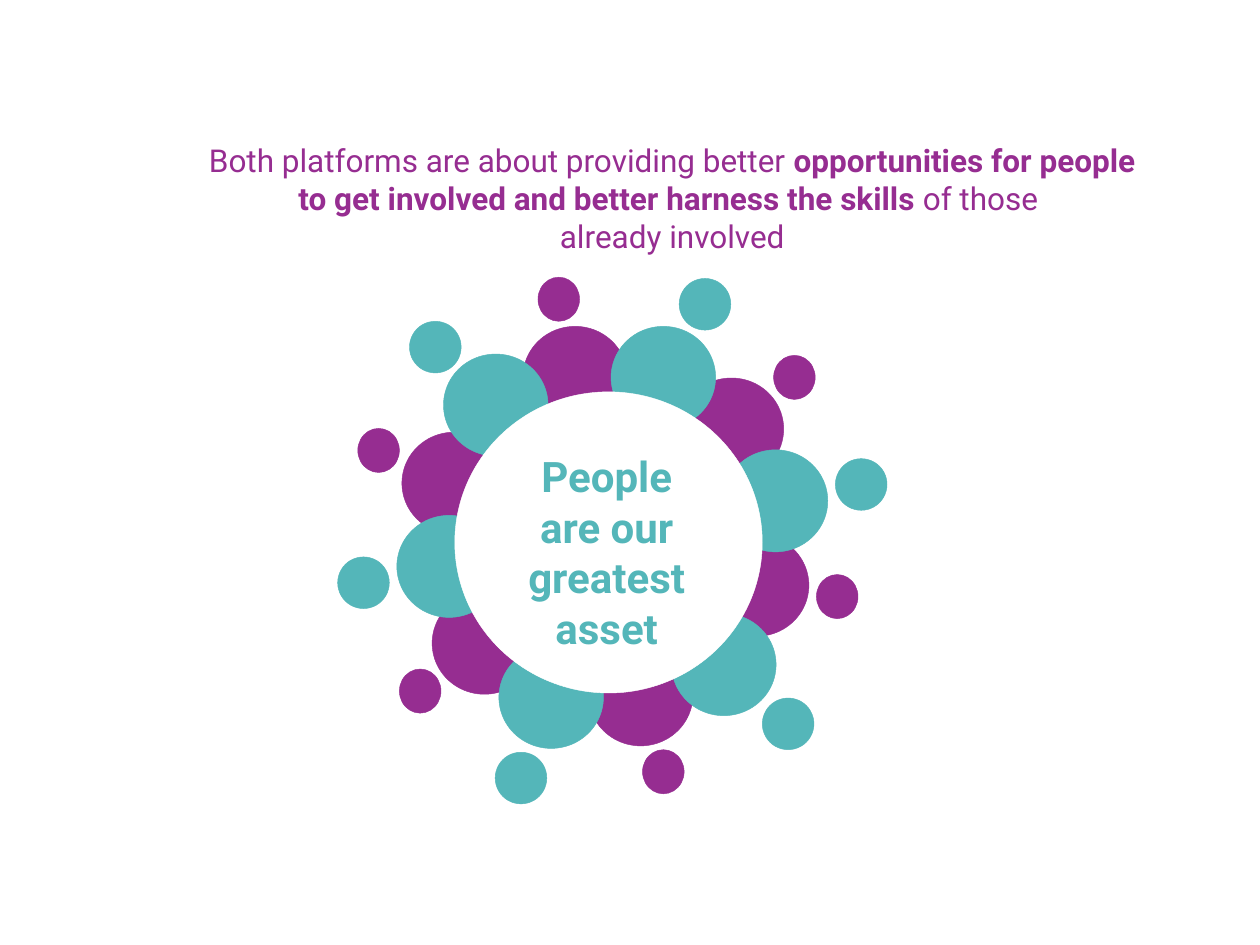
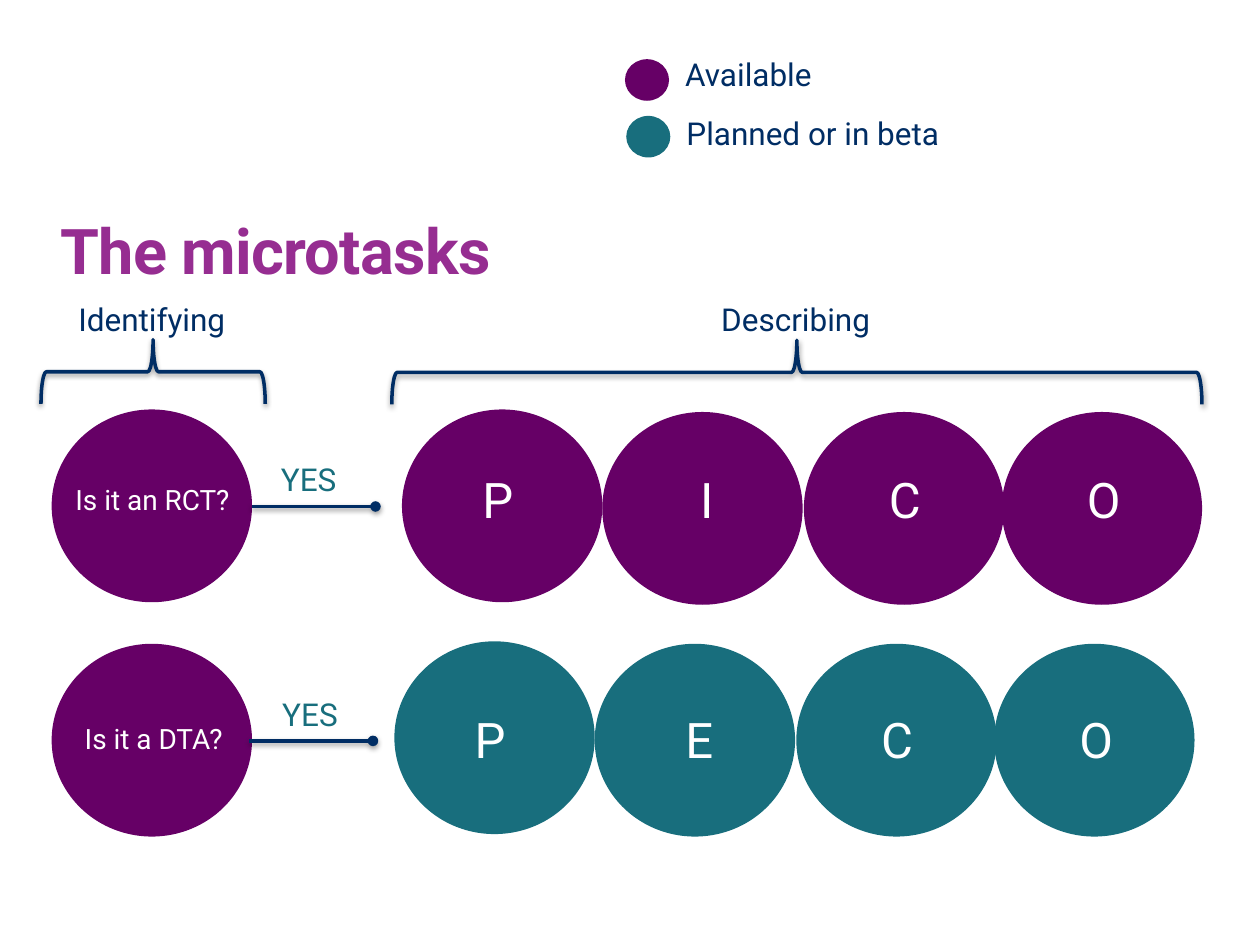
import lxml.etree
import pptx
import pptx.dml.color
import pptx.enum.shapes
import pptx.enum.text
import pptx.oxml
import pptx.oxml.ns
import pptx.util

EMU_PER_PX = 9144
FONT = "Roboto"
COLOURS = {
    "violet": "962D91",
    "aqua": "54B6B9",
    "plum": "660066",
    "teal": "186E7D",
    "navy": "002D64",
    "white": "FFFFFF",
    "black": "000000",
}
ALIGN = pptx.enum.text.PP_ALIGN
ANCHOR = pptx.enum.text.MSO_ANCHOR
SHAPES = pptx.enum.shapes.MSO_SHAPE


def px(length):
    """Turn px, 100 to the inch, into EMU."""
    return pptx.util.Emu(length * EMU_PER_PX)


def colour(name):
    """Look up a named colour."""
    return pptx.dml.color.RGBColor.from_string(COLOURS[name])


def add_text(slide, text, box, size=18, ink="navy", bold=False, align=ALIGN.CENTER,
             anchor=ANCHOR.TOP, inset=None, spacing=None, grow=True):
    """Write text, or paragraphs given as lists of (text, bold) runs."""
    label = slide.shapes.add_textbox(*map(px, box))
    frame = label.text_frame
    frame.word_wrap = True
    frame.vertical_anchor = anchor
    if grow:
        frame.auto_size = pptx.enum.text.MSO_AUTO_SIZE.SHAPE_TO_FIT_TEXT
    if inset is not None:
        frame.margin_left = frame.margin_right = px(inset)
        frame.margin_top = frame.margin_bottom = px(inset)
    paragraphs = [[(text, bold)]] if isinstance(text, str) else text
    for index, runs in enumerate(paragraphs):
        paragraph = frame.add_paragraph() if index else frame.paragraphs[0]
        paragraph.alignment = align
        for words, is_bold in runs:
            run = paragraph.add_run()
            run.text = words
            run.font.name = FONT
            run.font.size = pptx.util.Pt(size)
            run.font.bold = is_bold
            run.font.color.rgb = colour(ink)
            if spacing is not None:
                run.font._element.set("spc", str(spacing))


def add_circle(slide, box, fill=None, outline=None, weight=0.25):
    """Draw an ellipse with an optional fill and outline."""
    circle = slide.shapes.add_shape(SHAPES.OVAL, *map(px, box))
    circle.shadow.inherit = False
    if fill:
        circle.fill.solid()
        circle.fill.fore_color.rgb = colour(fill)
    else:
        circle.fill.background()
    if outline:
        circle.line.color.rgb = colour(outline)
        circle.line.width = pptx.util.Pt(weight)
    else:
        circle.line.fill.background()


def style_stroke(stroke):
    """Give a brace or link its navy line and soft shadow."""
    stroke.line.color.rgb = colour("navy")
    stroke.line.width = pptx.util.Pt(2)
    properties = stroke._element.spPr
    for effects in properties.findall(pptx.oxml.ns.qn("a:effectLst")):
        properties.remove(effects)
    properties.append(pptx.oxml.parse_xml(
        f'<a:effectLst {pptx.oxml.ns.nsdecls("a")}>'
        '<a:outerShdw blurRad="39370" dist="20320" dir="5400000" rotWithShape="0">'
        f'<a:srgbClr val="{COLOURS["black"]}"><a:alpha val="38000"/></a:srgbClr>'
        '</a:outerShdw></a:effectLst>'))


def add_brace(slide, box):
    """Draw a brace turned to point upwards."""
    brace = slide.shapes.add_shape(SHAPES.RIGHT_BRACE, *map(px, box))
    brace.rotation = 270
    brace.fill.background()
    style_stroke(brace)


def add_link(slide, left, top):
    """Draw a level line that ends in a dot."""
    link = slide.shapes.add_connector(
        pptx.enum.shapes.MSO_CONNECTOR.STRAIGHT, *map(px, (left, top, left + 98, top)))
    style_stroke(link)
    lxml.etree.SubElement(link.line._get_or_add_ln(), pptx.oxml.ns.qn("a:tailEnd"), type="oval")


def add_people(slide, places, size, ink):
    """Draw equal circles, as heads or shoulders, at the given places."""
    for place in places:
        add_circle(slide, place + size, fill=ink, outline=ink)


def add_question(slide, question, top, text_box, link, yes_box):
    """Draw an identifying question with its YES link."""
    add_circle(slide, (41, top, 159, 153), fill="plum")
    add_text(slide, question, text_box, size=16, ink="white")
    add_link(slide, *link)
    add_text(slide, "YES", yes_box, ink="teal")


def add_letter_row(slide, letters, shift, circle_top, letter_top, fill):
    """Draw a row of four describing circles with their letters."""
    for index, left in enumerate((319, 478, 638, 795)):
        top = circle_top + (2 if index else 0)
        add_circle(slide, (left + shift, top, 159, 153), fill=fill)
    for letter, left in zip(letters, (351, 517, 674, 832)):
        add_text(slide, letter, (left + shift, letter_top, 88, 57), size=28, ink="white")


def build_people_slide(slide):
    """Draw the ring of people around the message."""
    shoulders, round_head, narrow_head = (83, 81), (41, 41), (33, 35)
    add_circle(slide, (361, 301, 245, 247), outline="aqua", weight=1.5)
    add_people(slide, [(539, 300), (559, 424), (415, 259), (319, 343), (343, 470), (467, 511)],
               shoulders, "violet")
    add_people(slide, [(315, 409), (396, 513), (533, 487), (574, 357), (485, 259), (352, 281)],
               shoulders, "aqua")
    add_circle(slide, (361, 311, 244, 239), fill="white", outline="white")
    add_people(slide, [(605, 554), (663, 364), (539, 221), (268, 442), (325, 255), (393, 597)],
               round_head, "aqua")
    add_people(slide, [(648, 456), (614, 282), (427, 220), (510, 595), (317, 531), (284, 340)],
               narrow_head, "violet")
    add_text(slide, "People are our greatest asset", (401, 353, 161, 172),
             size=24, ink="aqua", bold=True)
    add_text(slide, [
        [("Both platforms are about providing better ", False),
         ("opportunities for people to get involved and better harness the skills ", True),
         ("of those ", False)],
        [("already involved", False)],
    ], (146, 107, 775, 101), ink="violet")


def build_microtasks_slide(slide):
    """Draw the identifying and describing microtasks with their legend."""
    add_text(slide, "The microtasks", (48, 159, 861, 69), size=36, ink="violet", bold=True,
             align=ALIGN.LEFT, anchor=ANCHOR.BOTTOM, inset=0, spacing=-40, grow=False)
    add_question(slide, "Is it an RCT?", 325, (20, 378, 202, 37), (200, 402), (203, 360, 84, 40))
    add_question(slide, "Is it a DTA?", 511, (21, 568, 202, 37), (198, 588), (204, 547, 84, 40))
    add_letter_row(slide, "PICO", 0, 325, 368, "plum")
    add_letter_row(slide, "PECO", -6, 509, 558, "teal")
    for status, fill, left, dot_top, text_top in (
            ("Available", "plum", 496, 47, 39),
            ("Planned or in beta", "teal", 497, 92, 86)):
        add_circle(slide, (left, dot_top, 35, 33), fill=fill)
        add_text(slide, status, (left + 38, text_top, 227, 40), align=ALIGN.LEFT)
    for stage, left, brace_box in (
            ("Identifying", 49, (96, 206, 51, 178)),
            ("Describing", 560, (607, -26, 51, 643))):
        add_brace(slide, brace_box)
        add_text(slide, stage, (left, 233, 143, 40))


def main():
    """Build and save both slides."""
    deck = pptx.Presentation()
    deck.slide_width, deck.slide_height = px(1000), px(750)
    for build in (build_people_slide, build_microtasks_slide):
        build(deck.slides.add_slide(deck.slide_layouts[6]))
    deck.save("out.pptx")


if __name__ == "__main__":
    main()
